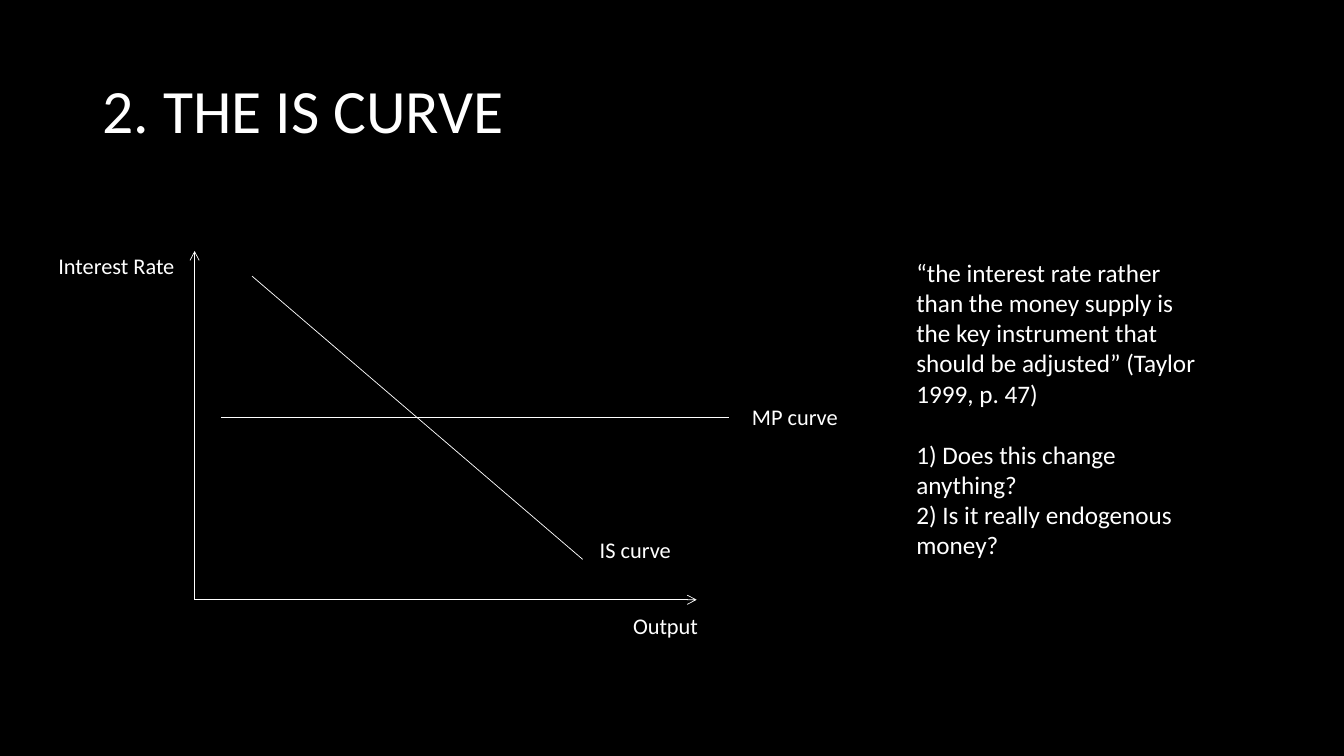
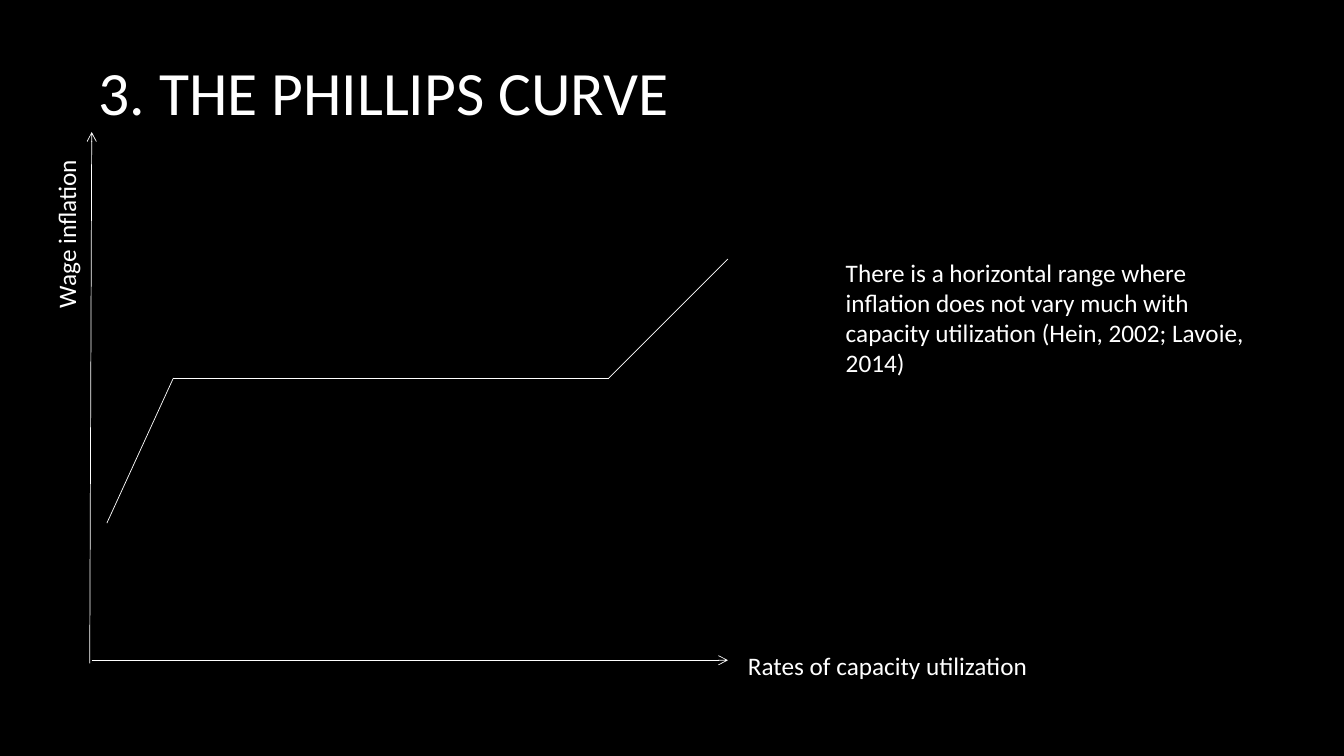
from itertools import pairwise

from pptx import Presentation, util as u
from pptx.dml.color import RGBColor
from pptx.enum import shapes, text
from pptx.oxml.ns import qn
from lxml import etree

BLACK = RGBColor(0x00, 0x00, 0x00)
WHITE = RGBColor(0xFF, 0xFF, 0xFF)
CELL = 0.1  # inches: side of one grid cell


def grid(*cells):
    """Turn counts of grid columns or rows into lengths."""
    return [u.Inches(n * CELL) for n in cells]


class Deck:
    FONT = "Calibri"
    TITLE, NOTE, LABEL = 44, 18, 16

    def __init__(self):
        self.prs = Presentation()
        self.prs.slide_width, self.prs.slide_height = u.Inches(13.33), u.Inches(7.5)

    def slide(self, title, x, y):
        self.s = self.prs.slides.add_slide(self.prs.slide_layouts[6])
        fill = self.s.background.fill
        fill.solid()
        fill.fore_color.rgb = BLACK
        tf = self.text([title], x, y, 115, 14.5, self.TITLE).text_frame
        tf.vertical_anchor = text.MSO_ANCHOR.MIDDLE
        tf.paragraphs[0].line_spacing = 0.9

    def text(self, lines, x, y, w, h, size=NOTE, gap=0, turn=0):
        """Add one paragraph per line; gap is the space in points after the first."""
        sp = self.s.shapes.add_textbox(*grid(x, y, w, h))
        sp.rotation = turn
        tf = sp.text_frame
        tf.word_wrap = True
        for i, line in enumerate(lines):
            p = tf.add_paragraph() if i else tf.paragraphs[0]
            r = p.add_run()
            r.text = line
            for name, value in {"name": self.FONT, "size": u.Pt(size)}.items():
                setattr(r.font, name, value)
            r.font.color.rgb = WHITE
        if gap:
            tf.paragraphs[0].space_after = u.Pt(gap)
        return sp

    def label(self, line, x, y, w):
        self.text([line], x, y, w, 3.7, self.LABEL)

    def line(self, start, end, arrow=False):
        c = self.s.shapes.add_connector(
            shapes.MSO_CONNECTOR.STRAIGHT, *grid(*start, *end))
        c.line.color.rgb = WHITE
        c.line.width = u.Pt(0.5)
        props = c._element.spPr
        if arrow:
            etree.SubElement(props.find(qn("a:ln")), qn("a:tailEnd"), type="arrow")
        etree.SubElement(props, qn("a:effectLst"))

    def curve(self, *points):
        for start, end in pairwise(points):
            self.line(start, end)

    def axis(self, start, end):
        self.line(start, end, arrow=True)


def is_curve(deck):
    deck.slide("2. THE IS CURVE", 9.2, 4)
    origin = (19.3, 59.5)
    deck.axis(origin, (19.3, 24.9))
    deck.axis(origin, (69.1, 59.5))
    deck.curve((25, 27.4), (57.8, 55.5))
    deck.curve((21.9, 41.4), (72.3, 41.4))
    for label in (("Interest Rate", 4.8, 24.5, 26.8), ("Output", 61.8, 60.2, 26.8),
                  ("MP curve", 73.6, 39.5, 10.6), ("IS curve", 58.5, 52.7, 10.6)):
        deck.label(*label)
    deck.text(["“the interest rate rather than the money supply is the key "
               "instrument that should be adjusted” (Taylor 1999, p. 47)",
               "1) Does this change anything?",
               "2) Is it really endogenous money?"], 89.9, 25, 30.7, 31.3, gap=22)


def phillips_curve(deck):
    deck.slide("3. THE PHILLIPS CURVE", 8.8, 2.2)
    deck.axis((8.9, 65.8), (9.1, 13.1))
    deck.axis((9.1, 65.5), (72.2, 65.5))
    deck.curve((10.6, 51.9), (17.2, 37.5), (60.4, 37.5), (72.2, 25.7))
    deck.text(["Rates of capacity utilization"], 73.2, 64, 30.4, 4)
    deck.text(["Wage inflation"], -3.7, 19.3, 20.5, 4, turn=270)
    deck.text(["There is a horizontal range where inflation does not vary much with "
               "capacity utilization (Hein, 2002; Lavoie, 2014)"], 82.9, 25, 44.6, 13.1)


def main():
    deck = Deck()
    is_curve(deck)
    phillips_curve(deck)
    deck.prs.save("out.pptx")


if __name__ == "__main__":
    main()
